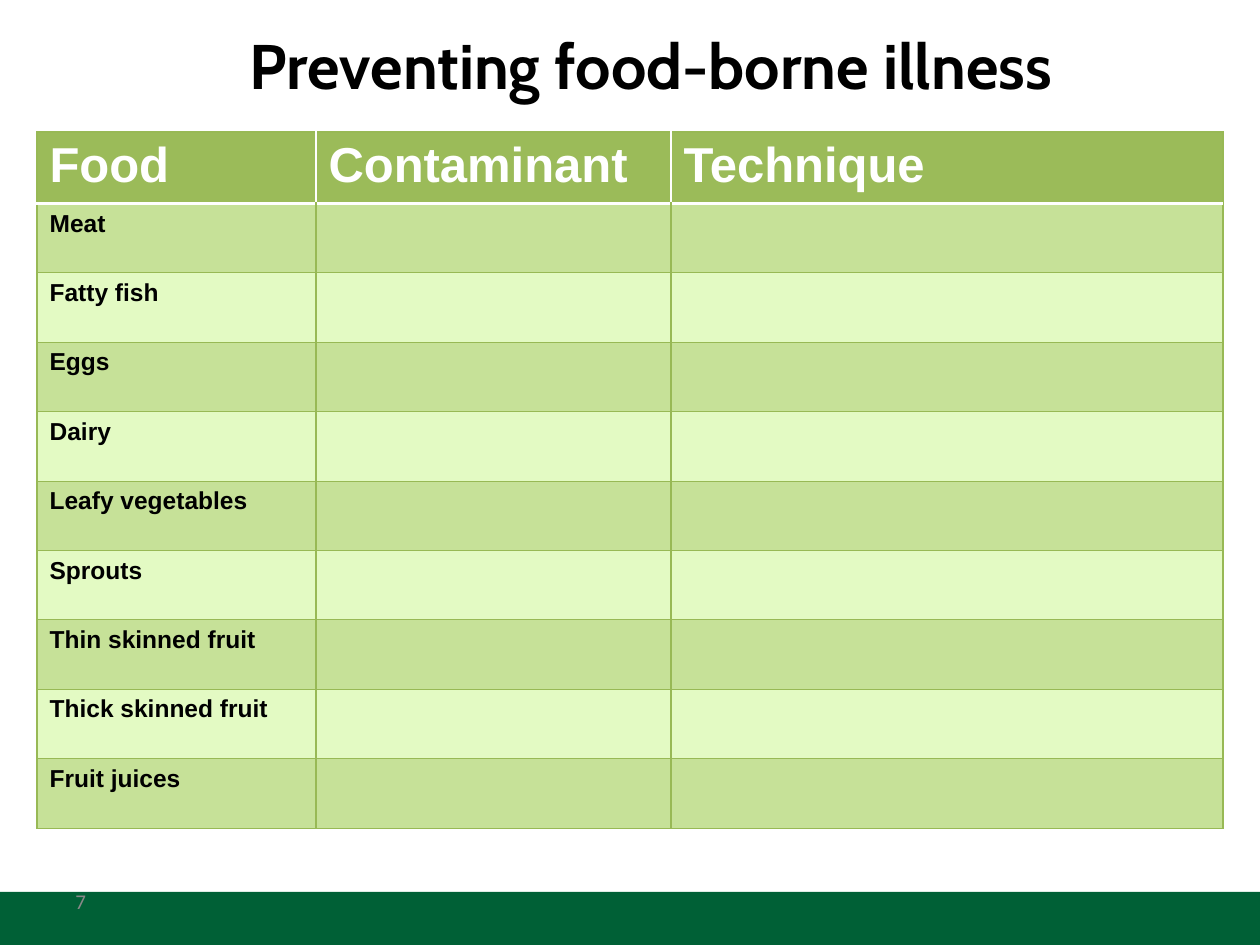
from dataclasses import dataclass

from lxml.etree import SubElement
from pptx import Presentation
from pptx.dml.color import RGBColor
from pptx.enum.shapes import MSO_SHAPE
from pptx.enum.text import MSO_ANCHOR, PP_ALIGN
from pptx.oxml.ns import qn
from pptx.util import Pt

EMU_PER_PX = 914400 // 126
HEADERS = ["Food", "Contaminant", "Technique"]
FOODS = ["Meat", "Fatty fish", "Eggs", "Dairy", "Leafy vegetables", "Sprouts",
         "Thin skinned fruit", "Thick skinned fruit", "Fruit juices"]
COL_WIDTHS = [279, 355, 552]
HEADER_HEIGHT, BODY_HEIGHT = 71, 625


@dataclass(frozen=True)
class Theme:
    """Colours, fonts and type sizes of the slide."""
    footer: str = "006036"
    header: str = "9BBB59"
    bands: tuple = ("C6E198", "E3FAC3")
    border: str = "98B955"
    white: str = "FFFFFF"
    black: str = "000000"
    grey: str = "898989"
    title_font: str = "Cabin"
    table_font: str = "Arial"
    number_font: str = "Calibri"
    title_size: int = 36
    header_size: int = 28
    food_size: int = 14
    number_size: int = 12


THEME = Theme()


def px(*lengths):
    """Turn pixel lengths into EMU."""
    return [n * EMU_PER_PX for n in lengths]


def write(tf, text, font, size, color, bold=False, align=PP_ALIGN.LEFT):
    """Write one formatted paragraph into a text frame."""
    p = tf.paragraphs[0]
    p.alignment = align
    r = p.add_run()
    r.text = text
    r.font.name, r.font.size, r.font.bold = font, Pt(size), bold
    r.font.color.rgb = RGBColor.from_string(color)


def add_text(s, box, text, **fmt):
    """Add a vertically centred text box."""
    tf = s.shapes.add_textbox(*px(*box)).text_frame
    tf.word_wrap = True
    tf.vertical_anchor = MSO_ANCHOR.MIDDLE
    write(tf, text, **fmt)


def add_band(s, box, color):
    """Add a plain filled rectangle."""
    sp = s.shapes.add_shape(MSO_SHAPE.RECTANGLE, *px(*box))
    sp.shadow.inherit = False
    sp.fill.solid()
    sp.fill.fore_color.rgb = RGBColor.from_string(color)
    sp.line.fill.background()


def style_cell(cell, fill, borders):
    """Set the borders of a cell by side, then its fill."""
    tcPr = cell._tc.get_or_add_tcPr()
    for side in "LRTB":
        if side in borders:
            color, width = borders[side]
            ln = SubElement(tcPr, qn(f"a:ln{side}"), w=str(Pt(width)))
            SubElement(SubElement(ln, qn("a:solidFill")), qn("a:srgbClr"), val=color)
    cell.fill.solid()
    cell.fill.fore_color.rgb = RGBColor.from_string(fill)


def add_food_table(s, left, top):
    """Add the table with its header row and banded food rows."""
    size = px(left, top, sum(COL_WIDTHS), HEADER_HEIGHT + BODY_HEIGHT)
    table = s.shapes.add_table(len(FOODS) + 1, len(HEADERS), *size).table
    for col, width in zip(table.columns, px(*COL_WIDTHS)):
        col.width = width
    thin, rule = (THEME.border, 0.75), (THEME.white, 2)
    table.rows[0].height = px(HEADER_HEIGHT)[0]
    last = len(HEADERS) - 1
    for j, text in enumerate(HEADERS):
        cell = table.cell(0, j)
        borders = {"T": thin, "B": rule}
        if j == 0:
            borders["L"] = thin
        if j == last:
            borders["R"] = thin
        style_cell(cell, THEME.header, borders)
        write(cell.text_frame, text, font=THEME.table_font,
              size=THEME.header_size, color=THEME.white, bold=True)
    for i, food in enumerate(FOODS, 1):
        table.rows[i].height = px(BODY_HEIGHT)[0] // len(FOODS)
        borders = {"L": thin, "R": thin, "T": rule if i == 1 else thin, "B": thin}
        for j in range(len(HEADERS)):
            style_cell(table.cell(i, j), THEME.bands[(i - 1) % 2], borders)
        write(table.cell(i, 0).text_frame, food, font=THEME.table_font,
              size=THEME.food_size, color=THEME.black, bold=True)


def main():
    """Build and save the slide."""
    prs = Presentation()
    prs.slide_width, prs.slide_height = px(1260, 945)
    s = prs.slides.add_slide(prs.slide_layouts[6])
    add_band(s, (0, 892, 1260, 53), THEME.footer)
    add_text(s, (84, -21, 1134, 170), "Preventing food-borne illness",
             font=THEME.title_font, size=THEME.title_size, color=THEME.black,
             bold=True, align=PP_ALIGN.CENTER)
    add_text(s, (63, 876, 294, 50), "7", font=THEME.number_font,
             size=THEME.number_size, color=THEME.grey)
    add_food_table(s, 37, 132)
    prs.save("out.pptx")


if __name__ == "__main__":
    main()
